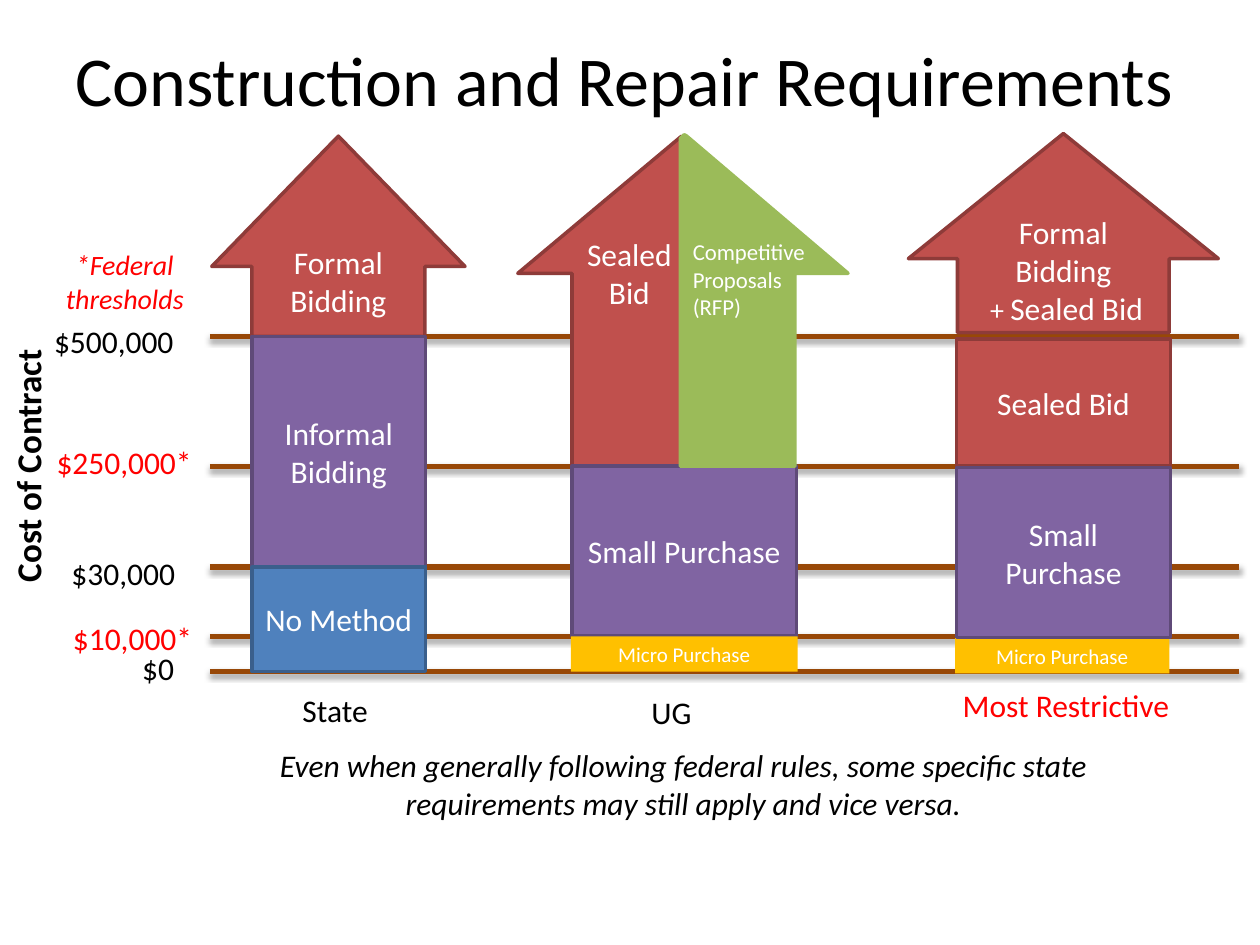
"""Build a slide comparing construction and repair purchasing thresholds."""
from dataclasses import dataclass
from typing import NamedTuple

from lxml import etree
from pptx import Presentation
from pptx import util as u
from pptx.dml import color
from pptx.enum import shapes, text
from pptx.oxml import ns

RED, PURPLE, BLUE, GREEN, GOLD = "C0504D", "8064A2", "4F81BD", "9BBB59", "FFC000"
DARK_RED, DARK_PURPLE, DARK_BLUE = "8E3B39", "5F4A78", "3A5F8C"
BROWN, BLACK, WHITE, ALERT = "984807", "000000", "FFFFFF", "FF0000"
LEVEL_500K, LEVEL_250K, LEVEL_30K, LEVEL_10K, LEVEL_0 = 192.2, 266.4, 324, 363.6, 383.8
RECTANGLE, UP_ARROW = shapes.MSO_SHAPE.RECTANGLE, shapes.MSO_SHAPE.UP_ARROW
LEFT, CENTER = text.PP_ALIGN.LEFT, text.PP_ALIGN.CENTER
TOP, MIDDLE, BOTTOM = text.MSO_ANCHOR.TOP, text.MSO_ANCHOR.MIDDLE, text.MSO_ANCHOR.BOTTOM


class Run(NamedTuple):
    text: str
    size: float = 18


Paragraphs = tuple[tuple[Run, ...], ...]


class Box(NamedTuple):
    left: float
    top: float
    width: float
    height: float


@dataclass
class Style:
    color: str = BLACK
    align: text.PP_ALIGN = LEFT
    anchor: text.MSO_ANCHOR = TOP
    bold: bool = False
    italic: bool = False


@dataclass
class Block:
    box: Box
    paragraphs: Paragraphs
    fill: str
    line: str | None = None
    kind: shapes.MSO_SHAPE = RECTANGLE
    adjustments: tuple[float, ...] = ()
    anchor: text.MSO_ANCHOR = MIDDLE


@dataclass
class Label:
    box: Box
    paragraphs: Paragraphs
    style: Style
    wrap: bool = True
    grow: bool = True
    rotation: float = 0
    space_after: float = 0


def plain(*lines: str, size: float = 18) -> Paragraphs:
    return tuple((Run(line, size),) for line in lines)


def rgb(value: str) -> color.RGBColor:
    return color.RGBColor.from_string(value)


def points(values) -> list[int]:
    return [u.Pt(value) for value in values]


def write(frame, paragraphs: Paragraphs, style: Style, space_after: float = 0) -> None:
    frame.vertical_anchor = style.anchor
    for index, runs in enumerate(paragraphs):
        paragraph = frame.add_paragraph() if index else frame.paragraphs[0]
        paragraph.alignment = style.align
        if space_after:
            paragraph.space_after = u.Pt(space_after)
        for content, size in runs:
            for position, line in enumerate(content.split("\n")):
                if position:
                    paragraph.add_line_break()
                run = paragraph.add_run()
                run.text = line
                font = run.font
                font.name, font.size = "Calibri", u.Pt(size)
                font.bold, font.italic = style.bold, style.italic
                font.color.rgb = rgb(style.color)


def paint(shape, fill: str, line: str | None) -> None:
    shape.shadow.inherit = False
    shape.fill.solid()
    shape.fill.fore_color.rgb = rgb(fill)
    if line:
        shape.line.color.rgb = rgb(line)
        shape.line.width = u.Pt(2)
    else:
        shape.line.fill.background()


def draw_threshold(slide, level: float) -> None:
    line = slide.shapes.add_connector(
        shapes.MSO_CONNECTOR.STRAIGHT, *points((120, level, 708, level)))
    line.line.color.rgb = rgb(BROWN)
    line.line.width = u.Pt(3)
    effects = etree.SubElement(line._element.spPr, ns.qn("a:effectLst"))
    shadow = etree.SubElement(
        effects, ns.qn("a:outerShdw"), blurRad=str(u.Pt(3.1)), dist=str(u.Pt(1.8)),
        dir="5400000", rotWithShape="0")
    tint = etree.SubElement(shadow, ns.qn("a:srgbClr"), val=BLACK)
    etree.SubElement(tint, ns.qn("a:alpha"), val="35000")


def draw_block(slide, block: Block) -> None:
    shape = slide.shapes.add_shape(block.kind, *points(block.box))
    for index, value in enumerate(block.adjustments):
        shape.adjustments[index] = value
    paint(shape, block.fill, block.line)
    shape.text_frame.word_wrap = True
    write(shape.text_frame, block.paragraphs, Style(WHITE, CENTER, block.anchor))


def draw_half_arrow(slide, outline: list[tuple[float, float]], fill: str, line: str) -> None:
    start, *rest = [points(vertex) for vertex in outline]
    builder = slide.shapes.build_freeform(*start)
    builder.add_line_segments(rest, close=True)
    paint(builder.convert_to_shape(), fill, line)


def draw_label(slide, label: Label) -> None:
    shape = slide.shapes.add_textbox(*points(label.box))
    shape.rotation = label.rotation
    frame = shape.text_frame
    frame.word_wrap = label.wrap
    if label.grow:
        frame.auto_size = text.MSO_AUTO_SIZE.SHAPE_TO_FIT_TEXT
    write(frame, label.paragraphs, label.style, label.space_after)


BLOCKS = [
    Block(Box(121, 77.8, 144.7, 114.4), plain("Formal\nBidding"), RED, DARK_RED,
          UP_ARROW, (0.683, 0.651)),
    Block(Box(144, LEVEL_500K, 99.2, LEVEL_30K - LEVEL_500K), plain("Informal Bidding"),
          PURPLE, DARK_PURPLE),
    Block(Box(144, LEVEL_30K, 99.2, LEVEL_0 - LEVEL_30K), plain("No Method"), BLUE, DARK_BLUE),
    Block(Box(326.9, LEVEL_250K, 128.2, LEVEL_10K - LEVEL_250K), plain("Small Purchase"),
          PURPLE, DARK_PURPLE),
    Block(Box(326.2, LEVEL_10K, 129.6, 20.2), plain("Micro Purchase", size=12), GOLD),
    Block(Box(545.8, 364.6, 122.4, 20.2), plain("Micro Purchase", size=12), GOLD),
    Block(Box(519.1, 76.3, 177.1, 113.8),
          ((Run("Formal\nBidding"),), (Run(" + ", 16), Run("Sealed Bid"))),
          RED, DARK_RED, UP_ARROW, (0.683, 0.628), BOTTOM),
    Block(Box(546.5, 193.7, 122.4, 72.7), plain("Sealed Bid"), RED, DARK_RED, UP_ARROW, (1, 0)),
    Block(Box(546.5, 267.1, 122.4, 97.2), plain("Small Purchase"), PURPLE, DARK_PURPLE),
]

SEALED_HALF = [(295.9, 156.2), (389.5, 77.8), (392.4, 79.9), (391.7, 80.6), (392.4, 266.4),
               (326.9, 266.4), (326.9, 156.2)]
PROPOSAL_HALF = [(484.6, 156.2), (392.4, 77.8), (391, 77), (388.8, 79.2), (388.8, 266.4),
                 (454.3, 266.4), (454.3, 156.2)]

CAPTION = Style(align=CENTER, anchor=BOTTOM)
LABELS = [
    Label(Box(36, 0, 648, 90), plain("Construction and Repair Requirements", size=40),
          Style(anchor=MIDDLE), grow=False),
    Label(Box(23.8, 180.7, 84.2, 29), plain("$500,000"), Style(), wrap=False),
    Label(Box(33.8, 313.2, 74.9, 29), plain("$30,000"), Style(), wrap=False),
    Label(Box(74.2, 367.2, 33.1, 29), plain("$0"), Style(), wrap=False),
    Label(Box(25.2, 249.8, 92.9, 29), plain("$250,000*"), Style(ALERT), wrap=False),
    Label(Box(34.6, 349.9, 83.5, 29), plain("$10,000*"), Style(ALERT), wrap=False),
    Label(Box(-59, 249.1, 149.8, 31.7), plain("Cost of Contract", size=20),
          Style(bold=True), wrap=False, rotation=270),
    Label(Box(13, 137.5, 116.6, 46), plain("*Federal thresholds", size=16),
          Style(ALERT, CENTER, BOTTOM, italic=True)),
    Label(Box(327.6, 131, 64.1, 51), plain("Sealed Bid"), Style(WHITE, CENTER)),
    Label(Box(388.8, 132.5, 83.5, 54.7), plain("Competitive Proposals", "(RFP)", size=13),
          Style(WHITE)),
    Label(Box(140.4, 391, 102.2, 29), plain("State"), CAPTION),
    Label(Box(332.6, 392.4, 102.2, 29), plain("UG"), CAPTION),
    Label(Box(534.2, 388.1, 149.8, 29), plain("Most Restrictive"), Style(ALERT, CENTER, BOTTOM)),
    Label(Box(130.3, 422.6, 520.6, 51),
          plain("Even when generally following federal rules, some specific state "
                "requirements may still apply and vice versa."),
          Style(align=CENTER, italic=True), space_after=6),
]


def main() -> None:
    presentation = Presentation()
    presentation.slide_width, presentation.slide_height = points((720, 540))
    slide = presentation.slides.add_slide(presentation.slide_layouts[6])
    for level in (LEVEL_500K, LEVEL_250K, LEVEL_30K, LEVEL_10K, LEVEL_0):
        draw_threshold(slide, level)
    draw_half_arrow(slide, SEALED_HALF, RED, DARK_RED)
    for block in BLOCKS:
        draw_block(slide, block)
    draw_half_arrow(slide, PROPOSAL_HALF, GREEN, GREEN)
    for label in LABELS:
        draw_label(slide, label)
    presentation.save("out.pptx")


if __name__ == "__main__":
    main()
